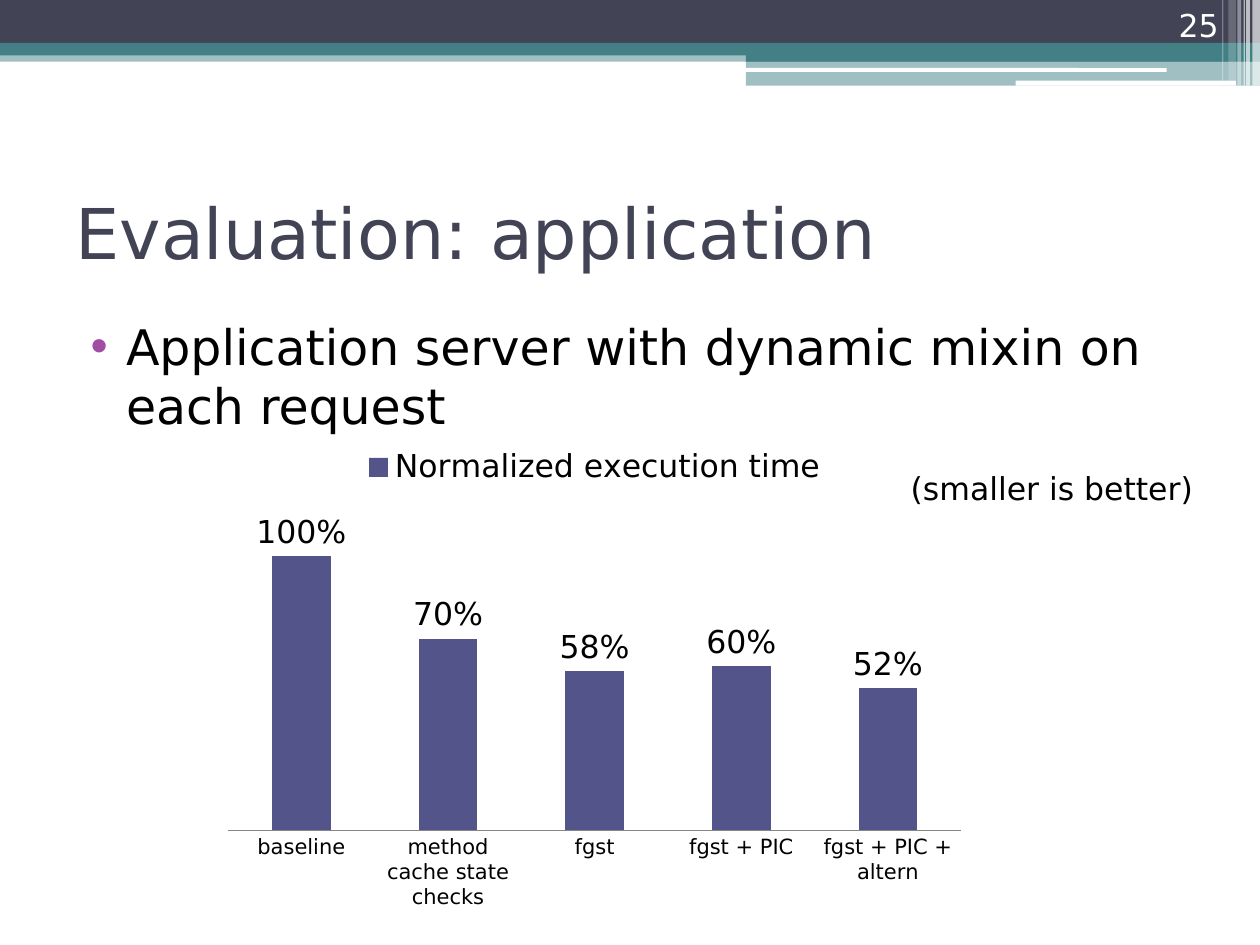
from lxml.etree import SubElement as Sub
from pptx import Presentation
from pptx.chart.data import CategoryChartData as Data
from pptx.dml.color import RGBColor as RGB
from pptx.enum.chart import XL_CHART_TYPE as KIND, XL_LABEL_POSITION as SPOT
from pptx.enum.chart import XL_LEGEND_POSITION as SIDE, XL_TICK_MARK as TICK
from pptx.enum.chart import XL_TICK_LABEL_POSITION as TLP
from pptx.enum.shapes import MSO_SHAPE as SHAPE
from pptx.enum.text import MSO_ANCHOR as ANCHOR, PP_ALIGN as ALIGN
from pptx.oxml.ns import qn
from pptx.util import Pt

PX = 9144  # 100 px to the inch
FONT = "DejaVu Sans"
NAVY = RGB(0x42, 0x44, 0x56)
TEAL = RGB(0x43, 0x80, 0x86)
WHITE = RGB(0xFF, 0xFF, 0xFF)
BLACK = RGB(0, 0, 0)
GRAY = RGB(0x86, 0x86, 0x86)
BAR = RGB(0x53, 0x54, 0x8A)

prs = Presentation()
prs.slide_width, prs.slide_height = 1000 * PX, 750 * PX
slide = prs.slides.add_slide(prs.slide_layouts[1])
shapes = slide.shapes


def place(item, x, y, w, h):
    item.left, item.top, item.width, item.height = (n * PX for n in (x, y, w, h))


def write(item, text, size, color, align=ALIGN.LEFT):
    para = item.text_frame.paragraphs[0]
    para.alignment = align
    run = para.add_run()
    run.text = text
    run.font.name, run.font.size = FONT, Pt(size)
    run.font.color.rgb = color
    return para


# Header bands and the stripes at the right: x, y, w, h, colour, opacity
bands = [
    (0, 40, 1000, 9, TEAL, 50),
    (0, 0, 1000, 34, NAVY, 100),
    (0, 34, 1000, 10, TEAL, 100),
    (592, 39, 408, 10, TEAL, 100),
    (592, 48, 408, 20, TEAL, 50),
    (591, 54, 335, 3, WHITE, 100),
    (806, 64, 175, 4, WHITE, 100),
]
stripes = [(994, 6, 68, 65), (989, 3, 68, 65), (987, 1, 68, 60),
           (982, 3, 68, 40), (975, 6, 64, 20), (970, 1, 64, 30)]
bands += [(x, 0, w, h, WHITE, alpha) for x, w, h, alpha in stripes]
for x, y, w, h, color, alpha in bands:
    kind = SHAPE.ROUNDED_RECTANGLE if h < 5 else SHAPE.RECTANGLE
    band = shapes.add_shape(kind, x * PX, y * PX, w * PX, h * PX)
    band.shadow.inherit = False
    band.line.fill.background()
    band.fill.solid()
    band.fill.fore_color.rgb = color
    if alpha < 100:
        tint = band.fill._xPr.find(qn("a:solidFill"))[0]
        Sub(tint, qn("a:alpha"), val=str(alpha * 1000))

# Title
title = shapes.title
place(title, 50, 125, 900, 117)
title.text_frame.vertical_anchor = ANCHOR.MIDDLE
write(title, "Evaluation: application", 40, NAVY)

# Bullet list
body = slide.placeholders[1]
place(body, 50, 246, 900, 473)
para = write(body, "Application server with dynamic mixin on each request", 28, BLACK)
para.space_before = Pt(3)
props = para._p.get_or_add_pPr()
props.set("marL", str(40 * PX))
props.set("indent", str(-28 * PX))
Sub(Sub(props, qn("a:buClr")), qn("a:srgbClr"), val="A04DA3")
Sub(props, qn("a:buFont"), typeface="Arial")
Sub(props, qn("a:buChar"), char="•")

# Slide number
num = shapes.add_textbox(894 * PX, 0, 83 * PX, 40 * PX)
num.text_frame.word_wrap = True
num.text_frame.vertical_anchor = ANCHOR.BOTTOM
write(num, "25", 18, WHITE, ALIGN.RIGHT)

# Column chart
data = Data(number_format="0%")
data.categories = ["baseline", "method cache state checks", "fgst",
                   "fgst + PIC", "fgst + PIC + altern"]
data.add_series("Normalized execution time", [1, 0.7, 0.58, 0.6, 0.52])
chart = shapes.add_chart(KIND.COLUMN_CLUSTERED, 169 * PX, 344 * PX,
                         606 * PX, 386 * PX, data).chart
chart.font.name, chart.font.size = FONT, Pt(18)
chart.font.color.rgb = BLACK
chart.has_title = False
chart.has_legend = True
chart.legend.position = SIDE.TOP
chart.legend.include_in_layout = False

cats = chart.category_axis
cats.major_tick_mark = TICK.NONE
cats.tick_labels.font.size = Pt(12)
cats.format.line.color.rgb = GRAY
vals = chart.value_axis
vals.visible = False
vals.has_major_gridlines = False
vals.minimum_scale = 0
vals.tick_label_position = TLP.NONE

plot = chart.plots[0]
plot.gap_width, plot.overlap = 150, -25
plot.vary_by_categories = False
fill = plot.series[0].format.fill
fill.solid()
fill.fore_color.rgb = BAR
plot.has_data_labels = True
labels = plot.data_labels
labels.show_value = True
labels.number_format, labels.number_format_is_linked = "0%", False
labels.position = SPOT.OUTSIDE_END

# Note beside the legend
note = shapes.add_textbox(713 * PX, 367 * PX, 250 * PX, 40 * PX)
note.text_frame.word_wrap = False
write(note, "(smaller is better)", 18, BLACK)

prs.save("out.pptx")
